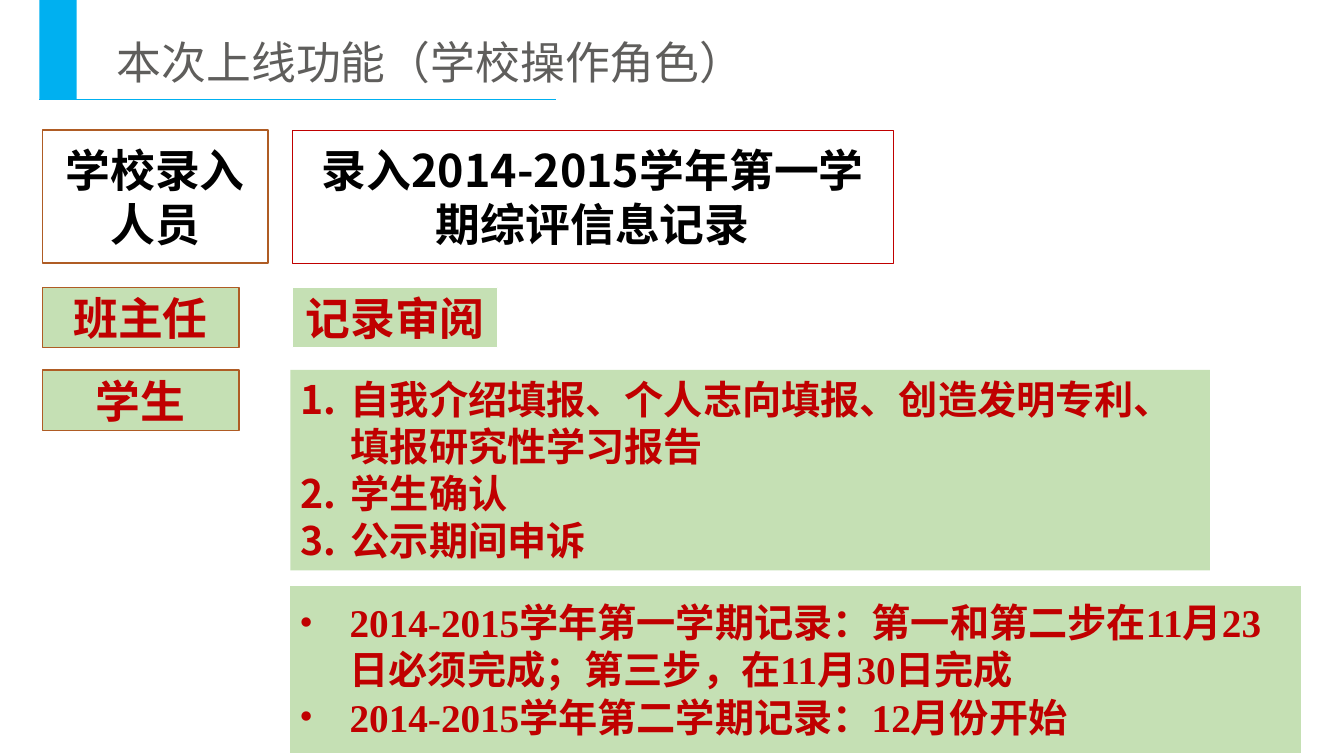
from dataclasses import dataclass

from lxml import etree
from pptx import Presentation
from pptx import util as u
from pptx.dml.color import RGBColor
from pptx.enum import shapes, text
from pptx.oxml.ns import qn


@dataclass(frozen=True)
class Theme:
    sky: str = "00B0F0"
    grey: str = "5F5E5C"
    black: str = "000000"
    white: str = "FFFFFF"
    red: str = "C00000"
    brown: str = "AF5C24"
    green: str = "C5E0B4"
    large: int = 32
    body: int = 28
    hanzi: str = "Noto Sans CJK SC"
    serif: str = "Times New Roman"


THEME = Theme()
WIDTH, HEIGHT = u.Inches(13.33), u.Inches(7.5)

# Shares of the slide, in percent
ROLE_LEFT, TASK_LEFT = 3.15, 21.75
ROLE_WIDTH, LABEL_HEIGHT = 14.63, 8
ENTRY_TOP, ENTRY_HEIGHT = 17.2, 17.6
TEACHER_TOP, STUDENT_TOP = 38, 48.93
BAND_LEFT, BAND_HEIGHT = 2.93, 13.2


def across(share):
    return round(WIDTH * share / 100)


def down(share):
    return round(HEIGHT * share / 100)


def place(left, top, width, height):
    return across(left), down(top), across(width), down(height)


def add_box(page, area, fill, line=None, weight=0.5):
    box = page.shapes.add_shape(shapes.MSO_SHAPE.RECTANGLE, *place(*area))
    box.shadow.inherit = False
    box.fill.solid()
    box.fill.fore_color.rgb = RGBColor.from_string(fill)
    if line:
        box.line.color.rgb = RGBColor.from_string(line)
        box.line.width = u.Pt(weight)
    else:
        box.line.fill.background()
    return box


def add_rule(page, left, right, top):
    rule = page.shapes.add_connector(
        shapes.MSO_CONNECTOR.STRAIGHT,
        across(left), down(top), across(right), down(top))
    rule.line.color.rgb = RGBColor.from_string(THEME.sky)
    rule.line.width = u.Pt(0.5)
    etree.SubElement(rule.element.spPr, qn("a:effectLst"))


def set_bullet(para, kind):
    """Give a paragraph a hanging number or dot."""
    props = para._p.get_or_add_pPr()
    indent = u.Inches(0.5)
    props.set("marL", str(indent))
    props.set("indent", str(-indent))
    face = etree.SubElement(props, qn("a:buFont"))
    if kind == "number":
        face.set("typeface", THEME.hanzi)
        etree.SubElement(props, qn("a:buAutoNum"), type="arabicPeriod")
    else:
        face.set("typeface", THEME.serif)
        etree.SubElement(props, qn("a:buChar"), char="•")


def write(box, lines, size, color, latin, bold=True, bullet=None,
          align=text.PP_ALIGN.LEFT, anchor=text.MSO_ANCHOR.MIDDLE):
    frame = box.text_frame
    frame.word_wrap = True
    frame.vertical_anchor = anchor
    for index, line in enumerate(lines):
        para = frame.add_paragraph() if index else frame.paragraphs[0]
        para.alignment = align
        if bullet:
            set_bullet(para, bullet)
        span = para.add_run()
        span.text = line
        font = span.font
        font.size, font.bold, font.name = u.Pt(size), bold, latin
        font.color.rgb = RGBColor.from_string(color)
        etree.SubElement(span._r.get_or_add_rPr(), qn("a:ea"),
                         typeface=THEME.hanzi)


def add_label(page, area, wording, fill, line, weight, color, latin):
    box = add_box(page, area, fill, line, weight)
    write(box, [wording], THEME.large, color, latin,
          align=text.PP_ALIGN.CENTER)


def add_header(page, title):
    add_box(page, (BAND_LEFT, 0, 2.78, BAND_HEIGHT), THEME.sky)
    add_rule(page, BAND_LEFT, 41.34, BAND_HEIGHT)
    heading = page.shapes.add_textbox(*place(7.95, 3.87, 82.07, 8.53))
    write(heading, [title], THEME.large, THEME.grey, THEME.hanzi,
          bold=False, anchor=text.MSO_ANCHOR.TOP)


def add_list(page, area, lines, bullet, anchor, line=None):
    box = add_box(page, area, THEME.green, line, 1.5)
    write(box, lines, THEME.body, THEME.red, THEME.serif,
          bullet=bullet, anchor=anchor)


def main():
    deck = Presentation()
    deck.slide_width, deck.slide_height = WIDTH, HEIGHT
    page = deck.slides.add_slide(deck.slide_layouts[6])
    add_header(page, "本次上线功能（学校操作角色）")

    # Roles and their short tasks
    plain = (THEME.white, THEME.black, THEME.hanzi)
    tinted = (THEME.green, THEME.red, THEME.serif)
    role, task, mark = (THEME.brown, 1), (THEME.red, 0.5), (THEME.white, 0.5)
    labels = [
        ("学校录入人员", ROLE_LEFT, ENTRY_TOP, 16.8, ENTRY_HEIGHT, plain, role),
        ("录入2014-2015学年第一学期综评信息记录",
         TASK_LEFT, ENTRY_TOP, 44.71, ENTRY_HEIGHT, plain, task),
        ("班主任", ROLE_LEFT, TEACHER_TOP, ROLE_WIDTH, LABEL_HEIGHT, tinted, role),
        ("记录审阅", TASK_LEFT, TEACHER_TOP, 15.3, LABEL_HEIGHT, tinted, mark),
        ("学生", ROLE_LEFT, STUDENT_TOP, ROLE_WIDTH, LABEL_HEIGHT, tinted, role),
    ]
    for wording, left, top, width, height, style, edge in labels:
        fill, color, latin = style
        add_label(page, (left, top, width, height), wording,
                  fill, *edge, color, latin)

    # Student steps
    add_list(page, (21.61, STUDENT_TOP, 68.42, 26.53), [
        "自我介绍填报、个人志向填报、创造发明专利、填报研究性学习报告",
        "学生确认",
        "公示期间申诉",
    ], "number", text.MSO_ANCHOR.TOP)

    # Deadlines
    add_list(page, (21.53, 77.33, 75.32, 22.4), [
        "2014-2015学年第一学期记录：第一和第二步在11月23日必须完成；"
        "第三步，在11月30日完成",
        "2014-2015学年第二学期记录：12月份开始",
    ], "dot", text.MSO_ANCHOR.MIDDLE, THEME.white)

    deck.save("out.pptx")


if __name__ == "__main__":
    main()
